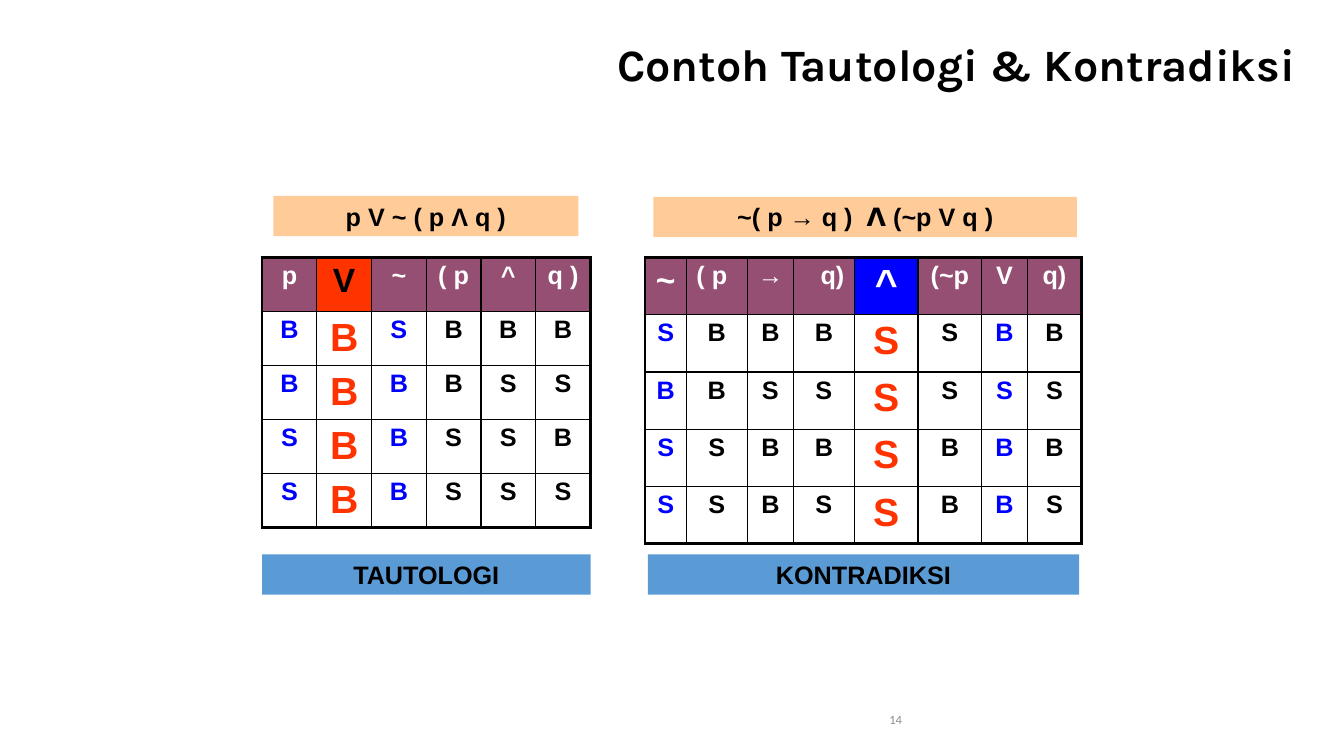
from lxml import etree
from pptx import Presentation
from pptx.dml.color import RGBColor
from pptx.enum.shapes import MSO_SHAPE
from pptx.enum.text import MSO_ANCHOR, PP_ALIGN
from pptx.oxml.ns import qn
from pptx.util import Pt

LEFT, CENTER, RIGHT = PP_ALIGN.LEFT, PP_ALIGN.CENTER, PP_ALIGN.RIGHT
MIDDLE = MSO_ANCHOR.MIDDLE
RECTANGLE = MSO_SHAPE.RECTANGLE

BLACK = RGBColor(0x00, 0x00, 0x00)
WHITE = RGBColor(0xFF, 0xFF, 0xFF)
GRAY = RGBColor(0x8C, 0x8C, 0x8C)
PLUM = RGBColor(0x95, 0x4F, 0x72)
RED = RGBColor(0xFF, 0x33, 0x00)
BLUE = RGBColor(0x00, 0x00, 0xFF)
SKY = RGBColor(0x5B, 0x9B, 0xD5)
PEACH = RGBColor(0xFF, 0xCC, 0x99)

BODY_SIZE, RESULT_SIZE = 18, 28
INNER_LINE, OUTER_LINE = 1, 2.25


def style(paragraph, size, color, align=CENTER, font="Arial", bold=True):
    paragraph.alignment = align
    paragraph.font.name = font
    paragraph.font.size = Pt(size)
    paragraph.font.bold = bold
    paragraph.font.color.rgb = color


def add_label(slide, box, text, size, color, font, bold):
    """Add right-aligned text without a background."""
    frame = slide.shapes.add_textbox(*map(Pt, box)).text_frame
    frame.word_wrap = True
    frame.vertical_anchor = MIDDLE
    paragraph = frame.paragraphs[0]
    paragraph.text = text
    paragraph.line_spacing = 0.9
    style(paragraph, size, color, RIGHT, font, bold)


def add_band(slide, box, pieces, fill):
    """Add a coloured bar; pieces are (text, font) pairs."""
    band = slide.shapes.add_shape(RECTANGLE, *map(Pt, box))
    band.shadow.inherit = False
    band.fill.solid()
    band.fill.fore_color.rgb = fill
    band.line.fill.background()
    frame = band.text_frame
    frame.word_wrap = True
    frame.vertical_anchor = MSO_ANCHOR.TOP
    paragraph = frame.paragraphs[0]
    for text, font in pieces:
        run = paragraph.add_run()
        run.text = text
        run.font.name = font
    style(paragraph, BODY_SIZE, BLACK)


def set_borders(cell, widths):
    """Draw black cell edges; widths maps L, R, T, B (in that order) to points."""
    properties = cell._tc.get_or_add_tcPr()
    for side, width in widths.items():
        edge = etree.SubElement(properties, qn(f"a:ln{side}"), w=str(Pt(width)))
        fill = etree.SubElement(edge, qn("a:solidFill"))
        etree.SubElement(fill, qn("a:srgbClr"), val=str(BLACK))


def add_truth_table(slide, box, widths, headers, rows, result, blue_columns):
    """headers hold (symbol, size, colour, fill, alignment); rows are strings of B and S."""
    row_count, column_count = len(rows) + 1, len(headers)
    table = slide.shapes.add_table(row_count, column_count, *map(Pt, box)).table
    table.first_row = table.horz_banding = False
    for column, width in zip(table.columns, widths):
        column.width = Pt(width)
    for row in table.rows:
        row.height = Pt(box[3] / row_count)

    for r in range(row_count):
        for c in range(column_count):
            cell = table.cell(r, c)
            cell.margin_top, cell.margin_bottom = Pt(3), Pt(2)
            at_edge = {"L": c == 0, "R": c == column_count - 1,
                       "T": r == 0, "B": r == row_count - 1}
            set_borders(cell, {side: OUTER_LINE if outer else INNER_LINE
                               for side, outer in at_edge.items()})
            align = CENTER
            if r == 0:
                text, size, color, fill, align = headers[c]
                cell.fill.solid()
                cell.fill.fore_color.rgb = fill
            else:
                text = rows[r - 1][c]
                size = RESULT_SIZE if c == result else BODY_SIZE
                color = RED if c == result else BLUE if c in blue_columns else BLACK
                cell.fill.background()
            paragraph = cell.text_frame.paragraphs[0]
            paragraph.text = text
            style(paragraph, size, color, align)


def header(symbol, size=BODY_SIZE, color=WHITE, fill=PLUM, align=CENTER):
    return symbol, size, color, fill, align


def add_tautology(slide, left, top, width):
    add_band(slide, (left + 8, top, 218, 28.8), [("p V ~ ( p Λ q )", "Arial")], PEACH)
    headers = [header("p"), header("V", 24, BLACK, RED), header("~"),
               header("( p"), header("^"), header("q )")]
    add_truth_table(slide, (left, top + 44, width, 192.5), [width / 6] * 6, headers,
                    ["BBSBBB", "BBBBSS", "SBBSSB", "SBBSSS"], 1, {0, 2})
    add_band(slide, (left, top + 256, width, 28.8), [("TAUTOLOGI", "Arial")], SKY)


def add_contradiction(slide, left, top, width):
    formula = [("~( p → q )  ", "Arial"), ("Λ", "DejaVu Sans"), (" (~p V q )", "Arial")]
    add_band(slide, (left + 6, top + 0.6, 302.5, 28.8), formula, PEACH)
    headers = [header("~", 24), header("( p", align=LEFT), header("→"),
               header("q)", align=RIGHT), header("^", RESULT_SIZE, WHITE, BLUE),
               header("(~p"), header("V"), header("q)")]
    add_truth_table(slide, (left, top + 44, width, 204.5),
                    [29.5, 43.5, 33, 43.5, 45.5, 45.5, 32.5, 39], headers,
                    ["SBBBSSBB", "BBSSSSSS", "SSBBSBBB", "SSBSSBBS"], 4, {0, 6})
    add_band(slide, (left + 2, top + 256, width - 4, 28.8), [("KONTRADIKSI", "Arial")], SKY)


def main():
    presentation = Presentation()
    presentation.slide_width, presentation.slide_height = Pt(960), Pt(540)
    slide = presentation.slides.add_slide(presentation.slide_layouts[6])
    add_label(slide, (178, 15, 754.5, 65.5), "Contoh Tautologi & Kontradiksi",
              32, BLACK, "Karla", True)
    add_tautology(slide, 187.2, 140, 234.7)
    add_contradiction(slide, 460.8, 140, 312)
    add_label(slide, (588, 500.5, 63.5, 28.8), "14", 9, GRAY, "Calibri", False)
    presentation.save("out.pptx")


if __name__ == "__main__":
    main()
